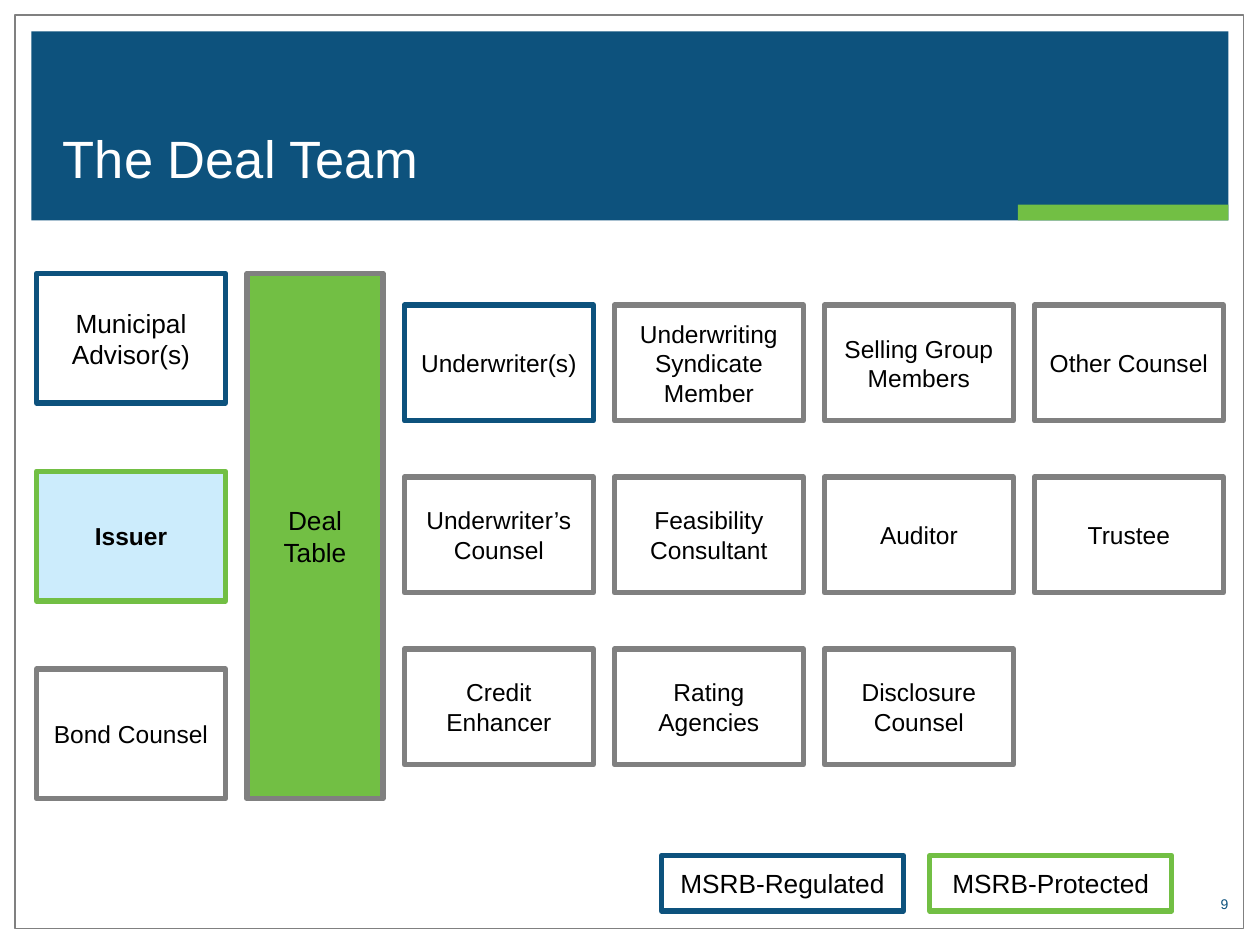
import pptx
import pptx.util
import pptx.dml.color
import pptx.enum.shapes
import pptx.enum.text

WIDE, HIGH = 10, 7.5
HUES = {"blue": "0D527D", "green": "72BF44", "gray": "808080",
        "pale": "CCECFC", "black": "000000", "white": "FFFFFF"}
ALIGN = pptx.enum.text.PP_ALIGN
ANCHOR = pptx.enum.text.MSO_ANCHOR
SIDE = [("Municipal Advisor(s)", "blue", None, 15, False),
        ("Issuer", "green", "pale", 14, True),
        ("Bond Counsel", "gray", None, 14, False)]
TEAM = [["Underwriter(s)", "Underwriting Syndicate Member",
         "Selling Group Members", "Other Counsel"],
        ["Underwriter’s Counsel", "Feasibility Consultant", "Auditor", "Trustee"],
        ["Credit Enhancer", "Rating Agencies", "Disclosure Counsel"]]
KEYS = [("MSRB-Regulated", "blue"), ("MSRB-Protected", "green")]


def tint(name):
    """Return the named colour."""
    return pptx.dml.color.RGBColor.from_string(HUES[name])


def span(box):
    """Turn a box in inches into lengths."""
    return [pptx.util.Inches(part) for part in box]


def write(frame, text, size, hue="black", bold=False, align=ALIGN.CENTER,
          anchor=ANCHOR.MIDDLE):
    """Put one styled paragraph into a text frame."""
    frame.word_wrap = True
    frame.vertical_anchor = anchor
    para = frame.paragraphs[0]
    para.text = text
    para.alignment = align
    font = para.font
    font.name, font.size, font.bold = "Arial", pptx.util.Pt(size), bold
    font.color.rgb = tint(hue)


def label(slide, box, text, size, hue, align):
    """Add a text box without margins, its text at the bottom."""
    frame = slide.shapes.add_textbox(*span(box)).text_frame
    frame.margin_left = frame.margin_right = 0
    frame.margin_top = frame.margin_bottom = 0
    write(frame, text, size, hue, align=align, anchor=ANCHOR.BOTTOM)


def block(slide, box, fill=None, line=None, width=3):
    """Add a plain rectangle and return it."""
    shape = slide.shapes.add_shape(
        pptx.enum.shapes.MSO_SHAPE.RECTANGLE, *span(box))
    shape.shadow.inherit = False
    if fill:
        shape.fill.solid()
        shape.fill.fore_color.rgb = tint(fill)
    else:
        shape.fill.background()
    if line:
        shape.line.color.rgb = tint(line)
        shape.line.width = pptx.util.Pt(width)
    else:
        shape.line.fill.background()
    return shape


def card(slide, box, text, line, fill=None, size=14, bold=False):
    """Add a framed rectangle with centred text."""
    write(block(slide, box, fill, line).text_frame, text, size, bold=bold)


def cells(box, cols, rows, width, height):
    """Yield row, column and box of cells spread evenly to the edges."""
    left, top, wide, high = box
    across = (wide - width) / max(cols - 1, 1)
    down = (high - height) / max(rows - 1, 1)
    for row in range(rows):
        for col in range(cols):
            yield row, col, (left + col * across, top + row * down, width, height)


def page(slide, box):
    """Draw the outer frame and the page number."""
    left, top, wide, high = box
    block(slide, box, line="gray", width=1)
    label(slide, (left + wide - 3.2, top + high - 0.26, 3.08, 0.13),
          "9", 8, "blue", ALIGN.RIGHT)


def banner(slide, box, text):
    """Draw the title band with its accent bar."""
    left, top, wide, high = box
    block(slide, box, "blue")
    bar, thick = wide * 0.176, high / 12
    block(slide, (left + wide - bar, top + high - thick, bar, thick), "green")
    label(slide, (left + 0.25, top + 0.17, wide - 0.5, high - 0.42),
          text, 30, "white", ALIGN.LEFT)


def side(slide, box):
    """Stack the issuer and its advisers."""
    for row, _, cell in cells(box, 1, len(SIDE), box[2], 1.03):
        text, line, fill, size, bold = SIDE[row]
        card(slide, cell, text, line, fill, size, bold)


def team(slide, box):
    """Lay out the other parties in a grid."""
    for row, col, cell in cells(box, 4, len(TEAM), 1.5, 0.92):
        if col < len(TEAM[row]):
            line = "blue" if row == col == 0 else "gray"
            card(slide, cell, TEAM[row][col], line)


def legend(slide, box):
    """Explain the outline colours."""
    for _, col, cell in cells(box, len(KEYS), 1, 1.92, box[3]):
        card(slide, cell, *KEYS[col], size=15)


def main():
    """Build and save the slide."""
    deck = pptx.Presentation()
    deck.slide_width, deck.slide_height = span((WIDE, HIGH))
    slide = deck.slides.add_slide(deck.slide_layouts[6])
    page(slide, (0.12, 0.12, WIDE - 0.25, HIGH - 0.25))
    banner(slide, (0.25, 0.25, WIDE * 0.95, HIGH * 0.2), "The Deal Team")
    side(slide, (0.29, 2.17, 1.5, 4.17))
    card(slide, (1.96, 2.17, 1.08, 4.17), "Deal Table", "gray", "green", 15)
    team(slide, (3.21, 2.42, 6.5, 3.65))
    legend(slide, (5.25, 6.79, 4.05, 0.44))
    deck.save("out.pptx")


if __name__ == "__main__":
    main()
